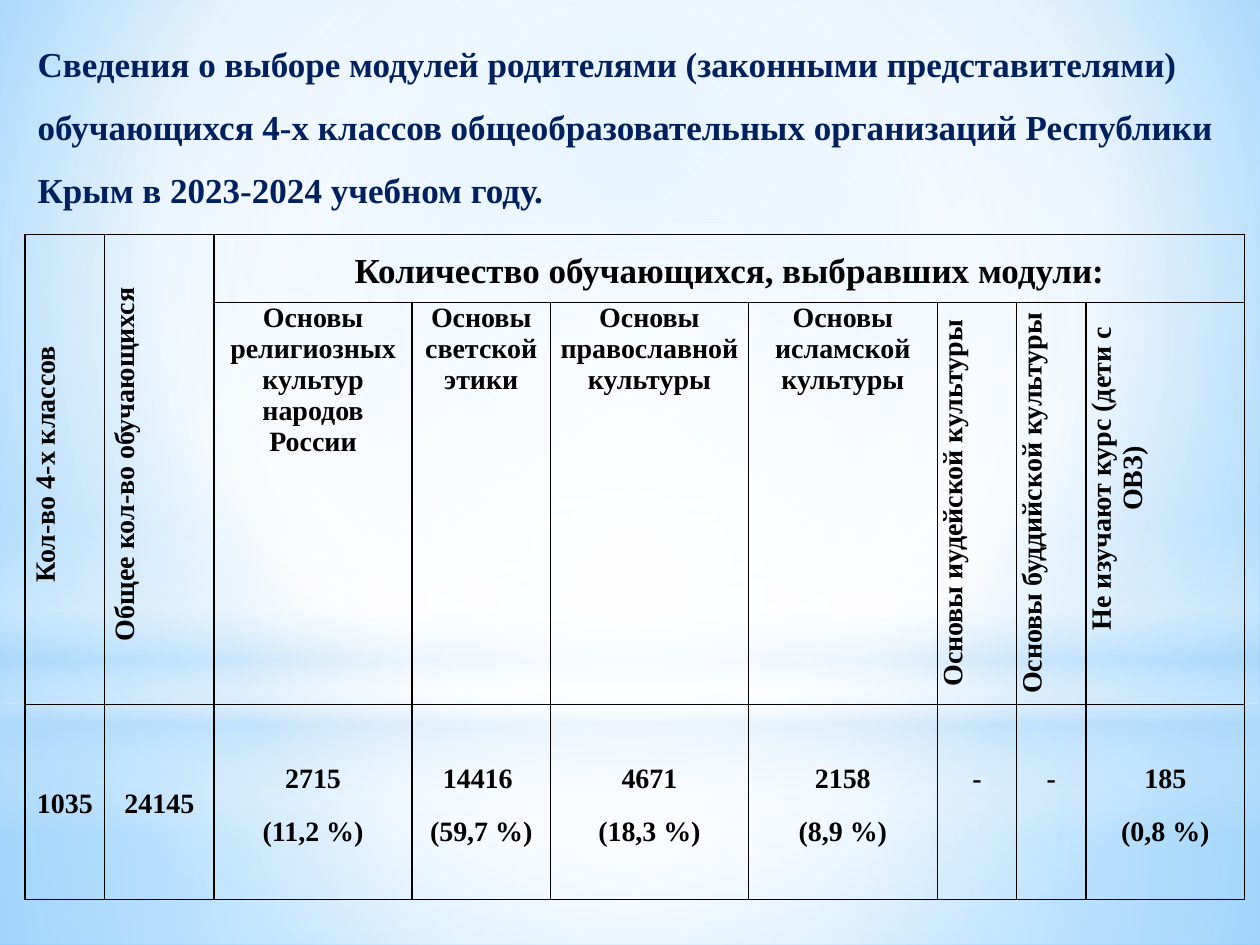
from pptx import Presentation, util as u
from pptx.dml.color import RGBColor
from pptx.enum import shapes, text
from pptx.oxml import parse_xml
from pptx.oxml.ns import nsdecls, qn

NAVY = RGBColor(0x00, 0x20, 0x60)
BLACK = RGBColor(0x00, 0x00, 0x00)
WHITE = RGBColor(0xFF, 0xFF, 0xFF)
PALE = RGBColor(0xB4, 0xDC, 0xFA)
SKY = RGBColor(0x9E, 0xD5, 0xFF)
BLUE = RGBColor(0x5B, 0xB9, 0xFF)
FONT = "Times New Roman"

TITLE = ("Сведения о выборе модулей родителями (законными представителями) "
         "обучающихся 4-х классов общеобразовательных организаций Республики "
         "Крым в 2023-2024 учебном году.")
MODULES_HEADING = "Количество обучающихся, выбравших модули:"
TOTALS = [("Кол-во 4-х классов", "1035"), ("Общее кол-во обучающихся", "24145")]
# heading, values, upright heading, left margin of the heading
MODULES = [
    ("Основы религиозных культур народов России", ["2715", "(11,2 %)"], False, 0.05),
    ("Основы светской этики", ["14416 ", "(59,7 %)"], False, 0.05),
    ("Основы православной культуры", ["4671", "(18,3 %)"], False, 0.05),
    ("Основы исламской культуры", ["2158", "(8,9 %)"], False, 0.05),
    ("Основы иудейской культуры", ["-"], True, 0.05),
    ("Основы буддийской культуры", ["-"], True, 0.05),
    ("Не изучают курс (дети с ОВЗ)", ["185", "(0,8 %)"], True, 0.44),
]
COLUMN_WIDTHS = [0.63, 0.87, 1.57, 1.1, 1.57, 1.5, 0.63, 0.55, 1.26]
ROW_HEIGHTS = [0.54, 3.19, 1.55]

# Gradient stops: position, colour, opacity (all in %)
BACKDROP = [(0, SKY, 100), (60, WHITE, 100), (100, BLUE, 100)]
CENTRE = (50, 50, 50, 50)
RECT, OVAL = shapes.MSO_SHAPE.RECTANGLE, shapes.MSO_SHAPE.OVAL
# kind, top, height, stops, centre of the glow (None: top to bottom)
GLOWS = [
    (RECT, 5.58, 1.92, [(0, WHITE, 91), (37, WHITE, 76), (100, PALE, 79)], CENTRE),
    (RECT, 0, 5.58, [(0, WHITE, 89), (48, WHITE, 62), (100, PALE, 79)], CENTRE),
    (RECT, 4.12, 2.5, [(0, WHITE, 0), (29, WHITE, 30), (45, PALE, 40),
                       (55, WHITE, 26), (65, PALE, 60), (100, WHITE, 0)], None),
    (OVAL, 1.75, 5.58, [(0, WHITE, 100), (56, WHITE, 0)], CENTRE),
]


def set_gradient(holder, stops, centre):
    """Replace the solid fill of holder by a gradient."""
    marks = "".join(
        f'<a:gs pos="{pos * 1000}"><a:srgbClr val="{colour}">'
        f'<a:alpha val="{opacity * 1000}"/></a:srgbClr></a:gs>'
        for pos, colour, opacity in stops)
    if centre:
        left, top, right, bottom = (side * 1000 for side in centre)
        course = (f'<a:path path="circle"><a:fillToRect l="{left}" t="{top}" '
                  f'r="{right}" b="{bottom}"/></a:path>')
    else:
        course = '<a:lin ang="5400000" scaled="0"/>'
    gradient = parse_xml(f'<a:gradFill {nsdecls("a")} rotWithShape="1">'
                         f'<a:gsLst>{marks}</a:gsLst>{course}</a:gradFill>')
    holder.replace(holder.find(qn("a:solidFill")), gradient)


def write(paragraph, words, size, colour, layout):
    for name, value in layout.items():
        setattr(paragraph, name, value)
    run = paragraph.add_run()
    run.text = words
    style = {"name": FONT, "size": u.Pt(size), "bold": True}
    for name, value in style.items():
        setattr(run.font, name, value)
    run.font.color.rgb = colour


def fill_cell(cell, lines, size=16, spacing=1.15, middle=False,
              left=0.05, right=0.05, top=0):
    margins = {"left": left, "right": right, "top": top, "bottom": 0}
    for side, value in margins.items():
        setattr(cell, f"margin_{side}", u.Inches(value))
    if middle:
        cell.vertical_anchor = text.MSO_ANCHOR.MIDDLE
    layout = {"alignment": text.PP_ALIGN.CENTER, "line_spacing": spacing,
              "space_after": u.Pt(10)}
    frame = cell.text_frame
    for index, words in enumerate(lines):
        paragraph = frame.add_paragraph() if index else frame.paragraphs[0]
        write(paragraph, words, size, BLACK, layout)


def add_borders(properties):
    for index, side in enumerate(("lnL", "lnR", "lnT", "lnB")):
        properties.insert(index, parse_xml(
            f'<a:{side} {nsdecls("a")} w="{u.Pt(1)}"><a:solidFill>'
            f'<a:srgbClr val="{BLACK}"/></a:solidFill></a:{side}>'))


deck = Presentation()
deck.slide_width, deck.slide_height = u.Inches(10), u.Inches(7.5)
slide = deck.slides.add_slide(deck.slide_layouts[6])

# Background and glows
slide.background.fill.solid()
set_gradient(slide.element.xpath(".//p:bgPr")[0], BACKDROP, (20, 10, 20, 60))
for kind, top, height, stops, centre in GLOWS:
    glow = slide.shapes.add_shape(kind, 0, u.Inches(top), u.Inches(10), u.Inches(height))
    glow.shadow.inherit = False
    glow.line.fill.background()
    glow.fill.solid()
    set_gradient(glow.element.spPr, stops, centre)

# Table grid
table_frame = slide.shapes.add_table(
    len(ROW_HEIGHTS), len(COLUMN_WIDTHS), u.Inches(0.2), u.Inches(1.86),
    u.Inches(9.69), u.Inches(sum(ROW_HEIGHTS)))
table = table_frame.table
table.first_row = table.horz_banding = False
for column, width in zip(table.columns, COLUMN_WIDTHS):
    column.width = u.Inches(width)
for row, height in zip(table.rows, ROW_HEIGHTS):
    row.height = u.Inches(height)

# Totals, then modules
upright = set()
for col, (heading, total) in enumerate(TOTALS):
    table.cell(0, col).merge(table.cell(1, col))
    fill_cell(table.cell(0, col), [heading], middle=True)
    fill_cell(table.cell(2, col), [total], middle=True, left=0.07, right=0.07)
    upright.add((0, col))
first = len(TOTALS)
table.cell(0, first).merge(table.cell(0, len(COLUMN_WIDTHS) - 1))
fill_cell(table.cell(0, first), [MODULES_HEADING], size=20, middle=True)
for col, (heading, values, turned, left) in enumerate(MODULES, first):
    fill_cell(table.cell(1, col), [heading], spacing=1.0, left=left)
    fill_cell(table.cell(2, col), values, top=0.43)
    if turned:
        upright.add((1, col))

# Clear fills, borders and upright headings
for cell in table.iter_cells():
    cell.fill.background()
for index, tc in enumerate(table_frame.element.iter(qn("a:tc"))):
    place = divmod(index, len(COLUMN_WIDTHS))
    properties = tc.find(qn("a:tcPr"))
    add_borders(properties)
    if place in upright:
        properties.set("vert", "vert270")
        if place[0] == 0:
            tc.find(".//" + qn("a:pPr")).set("marL", str(u.Inches(0.08)))

# Title
title = slide.shapes.add_textbox(u.Inches(0.2), u.Inches(0.11), u.Inches(9.69), u.Inches(1.62))
title_format = {"word_wrap": True, "vertical_anchor": text.MSO_ANCHOR.MIDDLE,
                "auto_size": text.MSO_AUTO_SIZE.SHAPE_TO_FIT_TEXT}
for name, value in title_format.items():
    setattr(title.text_frame, name, value)
write(title.text_frame.paragraphs[0], TITLE, 20, NAVY, {"line_spacing": 1.5})

deck.save("out.pptx")
